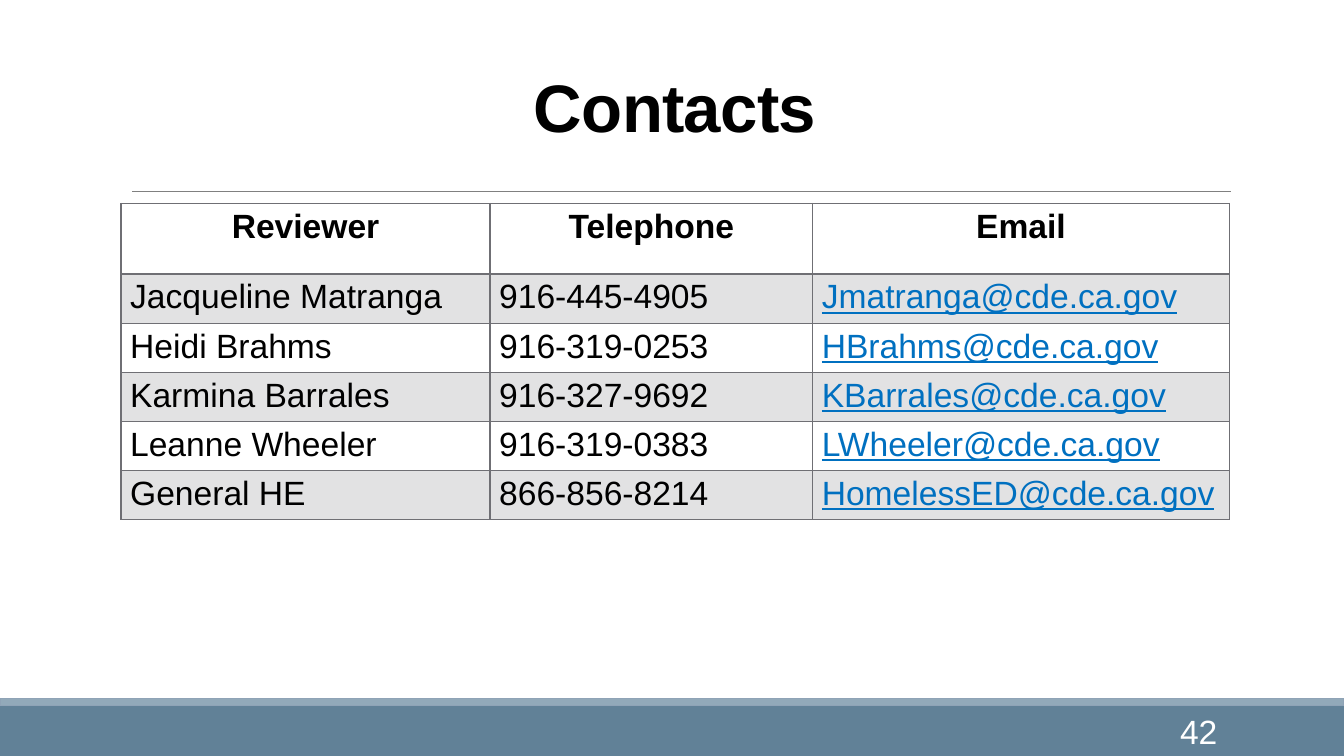
from lxml import etree
from pptx import Presentation
from pptx.dml.color import RGBColor
from pptx.enum.shapes import MSO_CONNECTOR, MSO_SHAPE
from pptx.enum.text import MSO_ANCHOR, PP_ALIGN
from pptx.oxml.ns import qn
from pptx.util import Cm, Pt

RECTANGLE = MSO_SHAPE.RECTANGLE
STRAIGHT = MSO_CONNECTOR.STRAIGHT
MIDDLE = MSO_ANCHOR.MIDDLE
LEFT, CENTER, RIGHT = PP_ALIGN.LEFT, PP_ALIGN.CENTER, PP_ALIGN.RIGHT

BLACK = RGBColor(0x00, 0x00, 0x00)
WHITE = RGBColor(0xFF, 0xFF, 0xFF)
SLATE = RGBColor(0x61, 0x81, 0x97)
MIST = RGBColor(0x92, 0xA9, 0xB9)
MIST_EDGE = RGBColor(0x8F, 0xA3, 0xB6)
RULE_GRAY = RGBColor(0x80, 0x80, 0x80)
GRID_GRAY = RGBColor(0x6F, 0x6F, 0x74)
LINK_BLUE = RGBColor(0x00, 0x70, 0xC0)

FONT = "Arial"
PAGE_WIDTH, PAGE_HEIGHT = Cm(33.87), Cm(19.05)
COLUMN_WIDTHS = Cm(9.3), Cm(8.13), Cm(10.5)
HEADER_HEIGHT, ROW_HEIGHT = Cm(1.78), Cm(1.2)
BAND_ALPHA = 20000

HEADINGS = ("Reviewer", "Telephone", "Email")
CONTACTS = (
    ("Jacqueline Matranga", "916-445-4905", "Jmatranga@cde.ca.gov"),
    ("Heidi Brahms", "916-319-0253", "HBrahms@cde.ca.gov"),
    ("Karmina Barrales", "916-327-9692", "KBarrales@cde.ca.gov"),
    ("Leanne Wheeler", "916-319-0383", "LWheeler@cde.ca.gov"),
    ("General HE", "866-856-8214", "HomelessED@cde.ca.gov"),
)


def write_text(frame, text, size=24, color=BLACK, bold=False, underline=False,
               align=LEFT, line_spacing=None, tracking=None):
    para = frame.paragraphs[0]
    para.alignment = align
    para.line_spacing = line_spacing
    span = para.add_run()
    span.text = text
    span.font.name = FONT
    span.font.size = Pt(size)
    span.font.bold = bold
    span.font.underline = underline
    span.font.color.rgb = color
    if tracking is not None:
        span.font._element.set("spc", str(int(tracking * 100)))


def add_text_box(page, left, top, width, height, text, **text_format):
    frame = page.shapes.add_textbox(left, top, width, height).text_frame
    frame.word_wrap = True
    frame.vertical_anchor = MIDDLE
    write_text(frame, text, **text_format)


def add_band(page, left, top, width, height, color):
    band = page.shapes.add_shape(RECTANGLE, left, top, width, height)
    band.shadow.inherit = False
    band.fill.solid()
    band.fill.fore_color.rgb = color
    band.line.fill.background()
    return band


def add_footer(page, left, top, width, height):
    strip_height = Cm(0.18)
    bar_top = top + strip_height
    bar_height = height - strip_height
    add_band(page, left, bar_top, width, bar_height, SLATE)
    strip = add_band(page, left, top, width, strip_height, MIST)
    strip.line.color.rgb = MIST_EDGE
    strip.line.width = Pt(1.25)
    add_text_box(page, left + Cm(27.3), bar_top + Cm(0.13), Cm(3.63), Cm(1.02),
                 "42", color=WHITE, align=RIGHT)


def add_title(page, left, top, width, height):
    bottom = top + height
    rule = page.shapes.add_connector(
        STRAIGHT, left + Cm(0.28), bottom, left + width + Cm(0.03), bottom)
    rule.line.color.rgb = RULE_GRAY
    rule.line.width = Pt(0.5)
    etree.SubElement(rule._element.spPr, qn("a:effectLst"))
    add_text_box(page, left, top, width, height, "Contacts", size=48, bold=True,
                 align=CENTER, line_spacing=0.85, tracking=-0.5)


def set_borders(cell, **widths):
    properties = cell._tc.get_or_add_tcPr()
    for side in "LRTB":
        border = etree.SubElement(properties, qn(f"a:ln{side}"),
                                  w=str(Pt(widths.get(side, 1))))
        fill = etree.SubElement(border, qn("a:solidFill"))
        etree.SubElement(fill, qn("a:srgbClr"), val=str(GRID_GRAY))


def shade_cell(cell):
    cell.fill.solid()
    cell.fill.fore_color.rgb = GRID_GRAY
    for color in cell._tc.tcPr.find(qn("a:solidFill")):
        etree.SubElement(color, qn("a:alpha"), val=str(BAND_ALPHA))


def format_cell(cell, row, column, text):
    cell.margin_left = cell.margin_right = Cm(0.23)
    cell.margin_top = cell.margin_bottom = Cm(0.11)
    if row == 0:
        set_borders(cell, B=2)
        write_text(cell.text_frame, text, bold=True, align=CENTER)
    else:
        set_borders(cell, T=2 if row == 1 else 1)
        is_email = column == len(HEADINGS) - 1
        write_text(cell.text_frame, text, underline=is_email,
                   color=LINK_BLUE if is_email else BLACK)
    if row % 2:
        shade_cell(cell)
    else:
        cell.fill.background()


def add_contacts(page, left, top, width, height):
    rows = (HEADINGS, *CONTACTS)
    table = page.shapes.add_table(
        len(rows), len(HEADINGS), left, top, width, height).table
    table.horz_banding = False
    for column, column_width in zip(table.columns, COLUMN_WIDTHS):
        column.width = column_width
    for row, texts in enumerate(rows):
        table.rows[row].height = ROW_HEIGHT if row else HEADER_HEIGHT
        for column, text in enumerate(texts):
            format_cell(table.cell(row, column), row, column, text)


def main():
    deck = Presentation()
    deck.slide_width, deck.slide_height = PAGE_WIDTH, PAGE_HEIGHT
    page = deck.slides.add_slide(deck.slide_layouts[6])
    left, width = Cm(3.05), sum(COLUMN_WIDTHS)
    footer_top = Cm(17.6)
    add_footer(page, 0, footer_top, PAGE_WIDTH, PAGE_HEIGHT - footer_top)
    add_title(page, left, Cm(0.79), width, Cm(4.04))
    add_contacts(page, left, Cm(5.13), width,
                 HEADER_HEIGHT + len(CONTACTS) * ROW_HEIGHT)
    deck.save("out.pptx")


if __name__ == "__main__":
    main()
